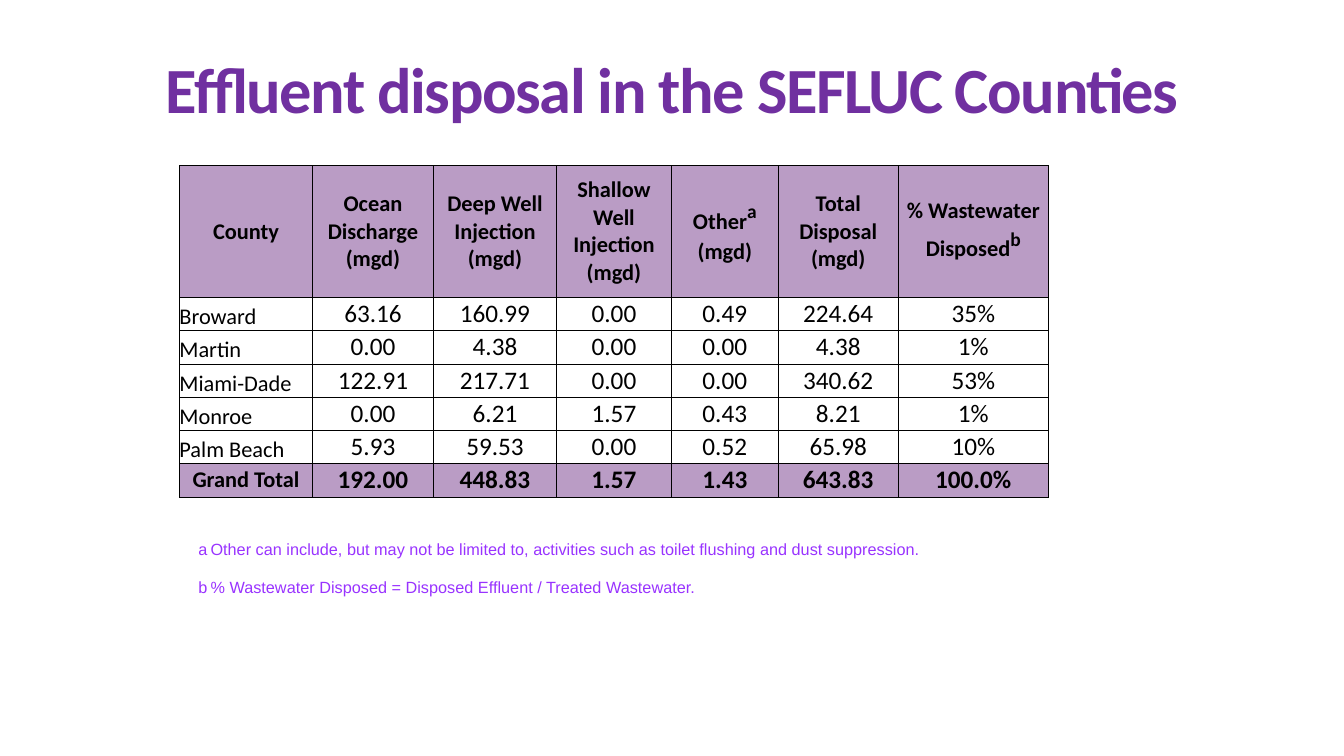
from dataclasses import dataclass

from lxml import etree
from pptx import Presentation
from pptx import util as u
from pptx.dml.color import RGBColor
from pptx.enum import text
from pptx.oxml import ns
from pptx.slide import Slide
from pptx.table import _Cell as Cell
from pptx.text.text import Font

PURPLE, LILAC, VIOLET, BLACK = "7030A0", "BA9CC5", "9933FF", "000000"
HEADING_HEIGHT, ROW_HEIGHT = 1.31, 0.33


@dataclass
class Column:
    heading: str
    width: float
    note: str = ""
    unit: str = ""


@dataclass
class County:
    name: str
    values: tuple[str, ...]
    is_total: bool = False


COLUMNS = [
    Column("County", 1.32),
    Column("Ocean Discharge (mgd)", 1.2),
    Column("Deep Well Injection (mgd)", 1.22),
    Column("Shallow Well Injection (mgd)", 1.14),
    Column("Other", 1.06, note="a", unit="(mgd)"),
    Column("Total Disposal (mgd)", 1.19),
    Column("% Wastewater Disposed", 1.49, note="b"),
]
COUNTIES = [
    County("Broward", ("63.16", "160.99", "0.00", "0.49", "224.64", "35%")),
    County("Martin", ("0.00", "4.38", "0.00", "0.00", "4.38", "1%")),
    County("Miami-Dade", ("122.91", "217.71", "0.00", "0.00", "340.62", "53%")),
    County("Monroe", ("0.00", "6.21", "1.57", "0.43", "8.21", "1%")),
    County("Palm Beach", ("5.93", "59.53", "0.00", "0.52", "65.98", "10%")),
    County("Grand Total", ("192.00", "448.83", "1.57", "1.43", "643.83", "100.0%"), True),
]
FOOTNOTES = [
    "a\tOther can include, but may not be limited to, activities such as toilet flushing and dust suppression.",
    "b\t% Wastewater Disposed = Disposed Effluent / Treated Wastewater.",
]


def color(hex_value: str) -> RGBColor:
    return RGBColor.from_string(hex_value)


def format_font(font: Font, size: float, hex_value: str = BLACK,
                bold: bool = False, name: str = "Calibri") -> None:
    font.name, font.size, font.bold = name, u.Pt(size), bold
    font.color.rgb = color(hex_value)


def raise_text(font: Font) -> None:
    """Turn the text into a superscript."""
    font._element.set("baseline", "30000")


def add_borders(cell: Cell) -> None:
    properties = cell._tc.get_or_add_tcPr()
    for index, side in enumerate(("lnL", "lnR", "lnT", "lnB")):
        line = etree.Element(ns.qn(f"a:{side}"), w=str(u.Pt(0.5)))
        fill = etree.SubElement(line, ns.qn("a:solidFill"))
        etree.SubElement(fill, ns.qn("a:srgbClr"), val=BLACK)
        properties.insert(index, line)


def fill_cell(cell: Cell, content: str, size: float, shaded: bool, is_name: bool = False) -> None:
    """Write a cell; names of counties stand at the bottom left, the rest is centred."""
    cell.margin_left = cell.margin_right = cell.margin_top = cell.margin_bottom = 0
    cell.vertical_anchor = text.MSO_ANCHOR.BOTTOM if is_name else text.MSO_ANCHOR.MIDDLE
    if shaded:
        cell.fill.solid()
        cell.fill.fore_color.rgb = color(LILAC)
    else:
        cell.fill.background()
    add_borders(cell)
    cell.text_frame.text = content
    for paragraph in cell.text_frame.paragraphs:
        paragraph.alignment = text.PP_ALIGN.LEFT if is_name else text.PP_ALIGN.CENTER
        for run in paragraph.runs:
            format_font(run.font, size, bold=shaded)


def add_title(slide: Slide) -> None:
    title = slide.shapes.title
    title.left, title.top = u.Inches(0), u.Inches(0.3)
    title.width, title.height = u.Inches(13.33), u.Inches(1.14)
    title.text_frame.text = "Effluent disposal in the SEFLUC Counties"
    title.text_frame.vertical_anchor = text.MSO_ANCHOR.MIDDLE
    paragraph = title.text_frame.paragraphs[0]
    paragraph.alignment = text.PP_ALIGN.CENTER
    font = paragraph.runs[0].font
    format_font(font, 46, PURPLE, bold=True)
    font._element.set("spc", "-100")


def add_disposal_table(slide: Slide) -> None:
    width = sum(column.width for column in COLUMNS)
    height = HEADING_HEIGHT + ROW_HEIGHT * len(COUNTIES)
    table = slide.shapes.add_table(
        len(COUNTIES) + 1, len(COLUMNS),
        u.Inches(1.78), u.Inches(1.64), u.Inches(width), u.Inches(height)).table
    table.first_row = table.horz_banding = False

    table.rows[0].height = u.Inches(HEADING_HEIGHT)
    for index, column in enumerate(COLUMNS):
        table.columns[index].width = u.Inches(column.width)
        cell = table.cell(0, index)
        heading = f"{column.heading}\n{column.unit}" if column.unit else column.heading
        fill_cell(cell, heading, 16, shaded=True)
        if column.note:
            run = cell.text_frame.paragraphs[0].add_run()
            run.text = column.note
            format_font(run.font, 24, bold=True)
            raise_text(run.font)

    for row, county in enumerate(COUNTIES, start=1):
        table.rows[row].height = u.Inches(ROW_HEIGHT)
        fill_cell(table.cell(row, 0), county.name, 16, county.is_total, not county.is_total)
        for index, value in enumerate(county.values, start=1):
            fill_cell(table.cell(row, index), value, 18, county.is_total)


def add_footnotes(slide: Slide) -> None:
    box = slide.shapes.add_textbox(u.Inches(1.87), u.Inches(5.27), u.Inches(10.97), u.Inches(0.59))
    frame = box.text_frame
    frame.word_wrap = True
    frame.text = "\n".join(FOOTNOTES)
    for paragraph in frame.paragraphs:
        tabs = etree.SubElement(paragraph._p.get_or_add_pPr(), ns.qn("a:tabLst"))
        etree.SubElement(tabs, ns.qn("a:tab"), pos=str(u.Inches(0.12)), algn="l")
        for run in paragraph.runs:
            format_font(run.font, 20, VIOLET, name="Arial")
            raise_text(run.font)
    frame.paragraphs[-1].space_before = u.Pt(3)
    frame.paragraphs[-1].space_after = u.Pt(18)


def main() -> None:
    presentation = Presentation()
    presentation.slide_width, presentation.slide_height = u.Inches(13.33), u.Inches(7.5)
    slide = presentation.slides.add_slide(presentation.slide_layouts.get_by_name("Title Only"))
    add_title(slide)
    add_disposal_table(slide)
    add_footnotes(slide)
    presentation.save("out.pptx")


if __name__ == "__main__":
    main()
